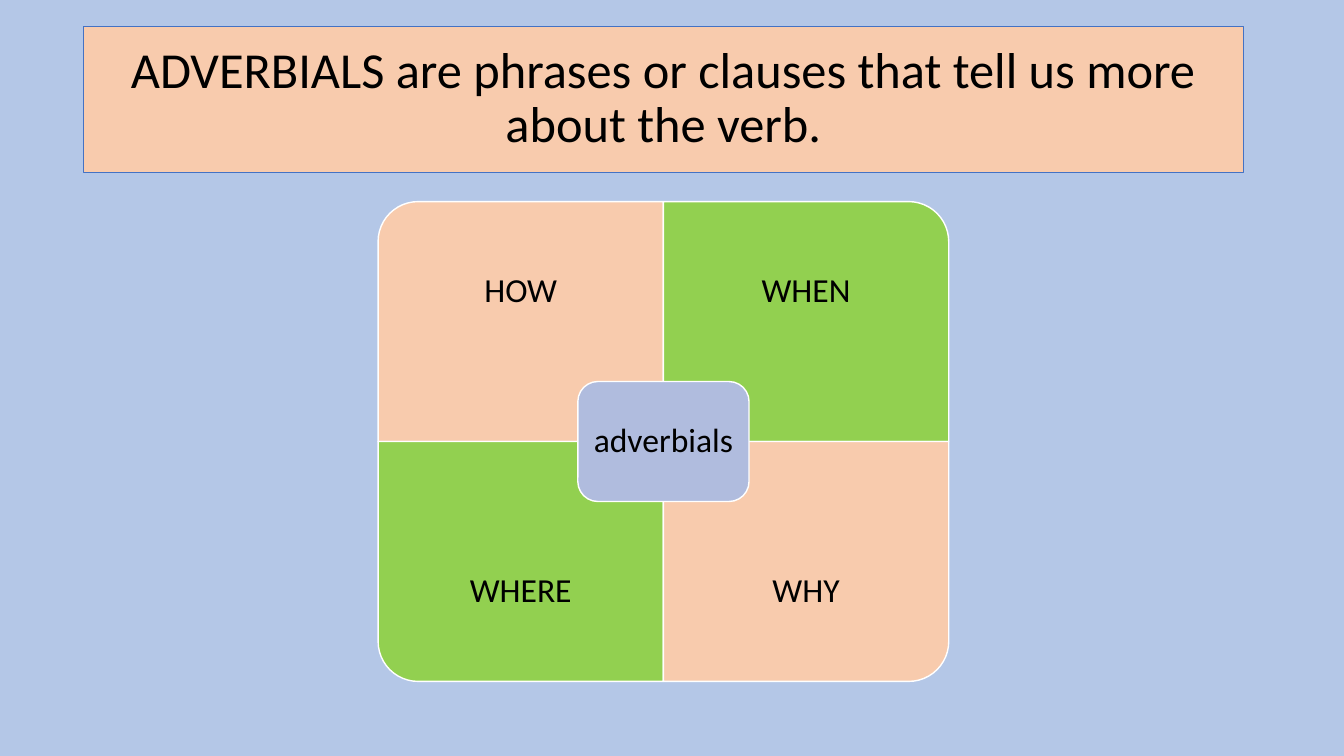
from pptx import Presentation
from pptx import util as u
from pptx.dml.color import RGBColor
from pptx.enum import shapes, text

TITLE = "ADVERBIALS are phrases or clauses that tell us more about the verb."
HUB = "adverbials"
QUADRANTS = [
    ("HOW", 0, 0, 270, "peach"),
    ("WHEN", 1, 0, 0, "green"),
    ("WHERE", 0, 1, 180, "green"),
    ("WHY", 1, 1, 90, "peach"),
]
COLOURS = {
    "sky": "B4C7E7", "peach": "F8CBAD", "green": "92D050", "hub": "B0BCDE",
    "blue": "4472C4", "white": "FFFFFF", "black": "000000",
}
LEFT, TOP = 3.75, 2
CELL_W, CELL_H = 2.83, 2.38
LABEL_SHARE = 0.75
HUB_W, HUB_H = CELL_W * 0.6, CELL_H * 0.5


def colour(name):
    return RGBColor.from_string(COLOURS[name])


def place(box, left, top, width, height):
    box.left, box.top, box.width, box.height = map(u.Inches, (left, top, width, height))


def paint(box, fill, line, weight):
    box.fill.solid()
    box.fill.fore_color.rgb = colour(fill)
    box.line.color.rgb = colour(line)
    box.line.width = u.Pt(weight)


def write(box, words, size, inset):
    frame = box.text_frame
    frame.text = words
    frame.word_wrap = True
    frame.auto_size = text.MSO_AUTO_SIZE.NONE
    frame.vertical_anchor = text.MSO_ANCHOR.MIDDLE
    frame.margin_left = frame.margin_right = u.Inches(inset)
    frame.margin_top = frame.margin_bottom = u.Inches(min(inset, 0.05))
    para = frame.paragraphs[0]
    para.alignment = text.PP_ALIGN.CENTER
    para.line_spacing = 0.9
    font = para.runs[0].font
    font.name, font.size = "Calibri", u.Pt(size)
    font.color.rgb = colour("black")


def add_block(page, kind, centre_x, centre_y, width, height, fill):
    box = page.shapes.add_shape(kind, 0, 0, 0, 0)
    place(box, centre_x - width / 2, centre_y - height / 2, width, height)
    box.shadow.inherit = False
    paint(box, fill, "white", 1)
    return box


def add_quadrant(page, words, column, row, turn, fill):
    left, top = LEFT + column * CELL_W, TOP + row * CELL_H
    sideways = turn % 180 == 90
    width, height = (CELL_H, CELL_W) if sideways else (CELL_W, CELL_H)
    box = add_block(page, shapes.MSO_SHAPE.ROUND_1_RECTANGLE,
                    left + CELL_W / 2, top + CELL_H / 2, width, height, fill)
    box.rotation = turn
    label = page.shapes.add_textbox(0, 0, 0, 0)
    label_top = top + row * CELL_H * (1 - LABEL_SHARE)
    place(label, left, label_top, CELL_W, CELL_H * LABEL_SHARE)
    write(label, words, 24, 0.19)


def main():
    deck = Presentation()
    deck.slide_width, deck.slide_height = u.Inches(13.33), u.Inches(7.5)
    page = deck.slides.add_slide(deck.slide_layouts[5])
    page.background.fill.solid()
    page.background.fill.fore_color.rgb = colour("sky")

    title = page.shapes.title
    place(title, 0.83, 0.26, 11.5, 1.45)
    paint(title, "peach", "blue", 0.75)
    write(title, TITLE, 36, 0.1)

    for quadrant in QUADRANTS:
        add_quadrant(page, *quadrant)
    hub = add_block(page, shapes.MSO_SHAPE.ROUNDED_RECTANGLE,
                    LEFT + CELL_W, TOP + CELL_H, HUB_W, HUB_H, "hub")
    write(hub, HUB, 24, 0.05)
    deck.save("out.pptx")


if __name__ == "__main__":
    main()
